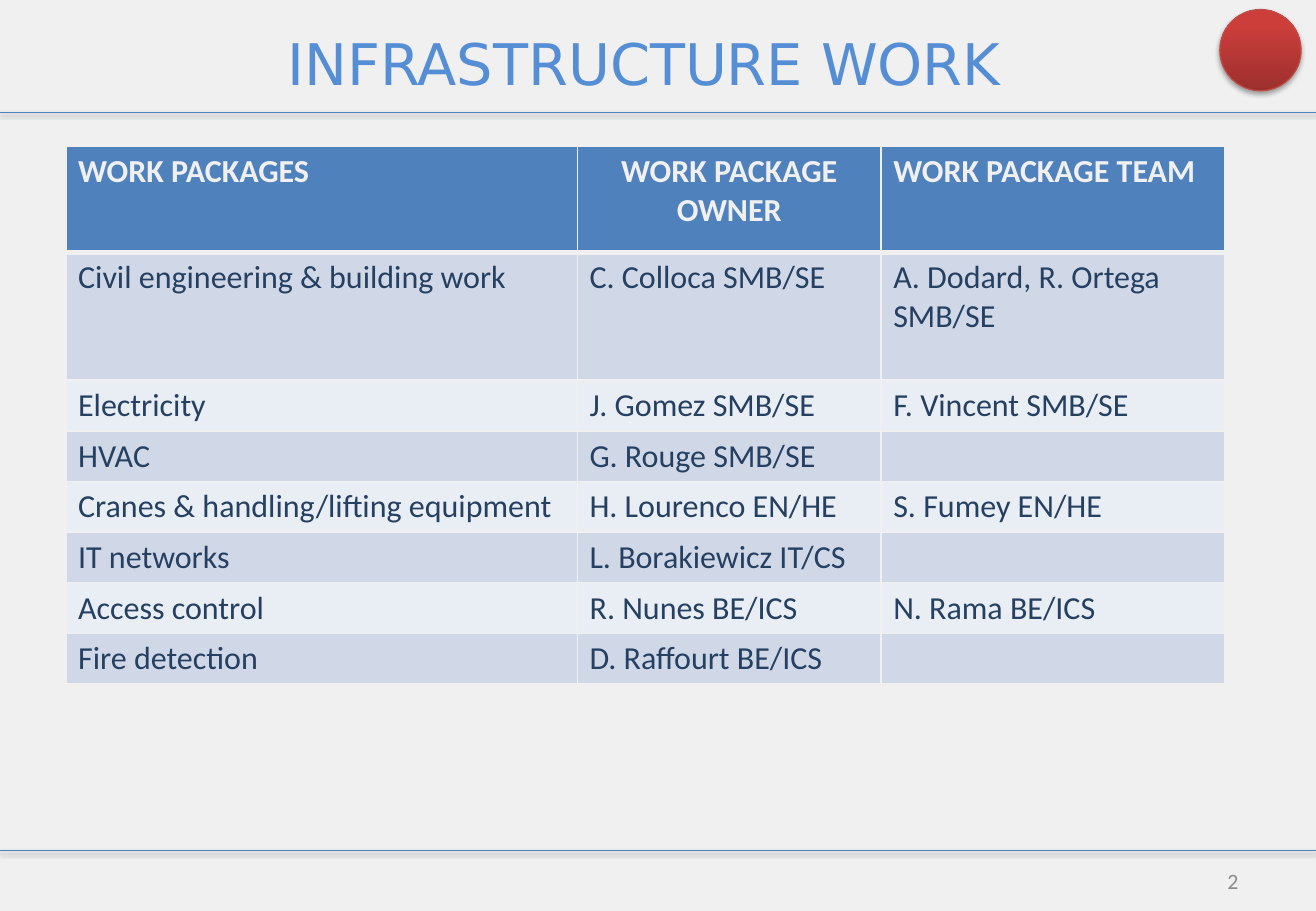
"""Build the infrastructure work slide with its table of work packages."""
from dataclasses import dataclass

from lxml import etree
from pptx import Presentation
from pptx import util as u
from pptx.dml.color import RGBColor
from pptx.enum import shapes, text
from pptx.oxml import ns

PAPER = RGBColor(0xF0, 0xF0, 0xF0)
BLUE = RGBColor(0x4F, 0x81, 0xBD)
TITLE_BLUE = RGBColor(0x55, 0x8E, 0xD5)
NAVY = RGBColor(0x25, 0x40, 0x61)
BAND_DARK = RGBColor(0xD0, 0xD8, 0xE8)
BAND_LIGHT = RGBColor(0xE9, 0xED, 0xF4)
GREY = RGBColor(0x8C, 0x8C, 0x8C)
BADGE_LOW = RGBColor(0x9C, 0x2F, 0x2D)
BADGE_HIGH = RGBColor(0xCB, 0x3E, 0x3A)
BADGE_LINE = RGBColor(0xBF, 0x4C, 0x48)
SHADOW = RGBColor(0, 0, 0)

WIDTH, HEIGHT = u.Cm(27.51), u.Cm(19.05)
RULES = (u.Cm(2.34), u.Cm(17.78))
COLUMNS = (10.69, 6.35, 7.19)
HEADER_HEIGHT, FIRST_HEIGHT, ROW_HEIGHT = 2.23, 2.67, 1.05


@dataclass
class Package:
    name: str
    owner: str
    team: str = ""
    height: float = ROW_HEIGHT


HEADER = Package("WORK PACKAGES", "WORK PACKAGE OWNER", "WORK PACKAGE TEAM", HEADER_HEIGHT)
PACKAGES = [
    Package("Civil engineering & building work", "C. Colloca SMB/SE",
            "A. Dodard, R. Ortega SMB/SE", FIRST_HEIGHT),
    Package("Electricity", "J. Gomez SMB/SE", "F. Vincent SMB/SE"),
    Package("HVAC", "G. Rouge SMB/SE"),
    Package("Cranes & handling/lifting equipment", "H. Lourenco EN/HE", "S. Fumey EN/HE"),
    Package("IT networks", "L. Borakiewicz IT/CS"),
    Package("Access control", "R. Nunes BE/ICS", "N. Rama BE/ICS"),
    Package("Fire detection", "D. Raffourt BE/ICS"),
]


def write(tf, words: str, *, size: float, color: RGBColor, font: str = "Calibri",
          bold: bool = False, align=text.PP_ALIGN.LEFT) -> None:
    p = tf.paragraphs[0]
    p.alignment = align
    for target in (p.font, p.add_run().font if words else p.font):
        target.name, target.size, target.bold = font, u.Pt(size), bold
        target.color.rgb = color
    if words:
        p.runs[0].text = words


def add_shadow(sp, alpha: int, distance: float) -> None:
    sp_pr = sp._element.spPr
    effects = sp_pr.find(ns.qn("a:effectLst"))
    if effects is None:
        effects = etree.SubElement(sp_pr, ns.qn("a:effectLst"))
    outer = etree.SubElement(effects, ns.qn("a:outerShdw"), blurRad=str(u.Pt(3.1)),
                             dist=str(u.Pt(distance)), dir="5400000", rotWithShape="0")
    color = etree.SubElement(outer, ns.qn("a:srgbClr"), val=str(SHADOW))
    etree.SubElement(color, ns.qn("a:alpha"), val=str(alpha * 1000))


def add_rule(s, y: int) -> None:
    line = s.shapes.add_connector(shapes.MSO_CONNECTOR.STRAIGHT, 0, y, WIDTH, y)
    line.line.color.rgb = BLUE
    line.line.width = u.Pt(0.25)
    add_shadow(line, 38, 1.6)


def add_badge(s) -> None:
    sp = s.shapes.add_shape(shapes.MSO_SHAPE.OVAL, u.Cm(25.5), u.Cm(0.2), u.Cm(1.7), u.Cm(1.7))
    sp.shadow.inherit = False
    sp.fill.gradient()
    sp.fill.gradient_angle = 90
    for stop, color, position in zip(sp.fill.gradient_stops, (BADGE_LOW, BADGE_HIGH), (0, 0.8)):
        stop.color.rgb = color
        stop.position = position
    sp.line.color.rgb = BADGE_LINE
    sp.line.width = u.Pt(0.75)
    add_shadow(sp, 35, 1.8)


def set_borders(cell, top: float, bottom: float) -> None:
    tc_pr = cell._tc.get_or_add_tcPr()
    for side, width in (("L", 1), ("R", 1), ("T", top), ("B", bottom)):
        ln = etree.SubElement(tc_pr, ns.qn(f"a:ln{side}"), w=str(u.Pt(width)))
        fill = etree.SubElement(ln, ns.qn("a:solidFill"))
        etree.SubElement(fill, ns.qn("a:srgbClr"), val=str(PAPER))


def add_packages(s) -> None:
    rows = [HEADER, *PACKAGES]
    table = s.shapes.add_table(len(rows), len(COLUMNS), u.Cm(1.38), u.Cm(3.05),
                               u.Cm(sum(COLUMNS)), u.Cm(sum(r.height for r in rows))).table
    for column, width in zip(table.columns, COLUMNS):
        column.width = u.Cm(width)
    for i, package in enumerate(rows):
        table.rows[i].height = u.Cm(package.height)
        header = i == 0
        band = BLUE if header else BAND_DARK if i % 2 else BAND_LIGHT
        for j, words in enumerate((package.name, package.owner, package.team)):
            cell = table.cell(i, j)
            set_borders(cell, 3 if i == 1 else 1, 3 if header else 1)
            cell.fill.solid()
            cell.fill.fore_color.rgb = band
            centred = header and j == 1
            write(cell.text_frame, words, size=19, color=PAPER if header else NAVY, bold=header,
                  align=text.PP_ALIGN.CENTER if centred else text.PP_ALIGN.LEFT)


def add_title(s) -> None:
    sp = s.shapes.title
    sp.left, sp.top, sp.width, sp.height = u.Cm(3.38), u.Cm(0.2), u.Cm(20.17), u.Cm(2.21)
    sp.text_frame.vertical_anchor = text.MSO_ANCHOR.MIDDLE
    sp.text_frame.auto_size = text.MSO_AUTO_SIZE.NONE
    write(sp.text_frame, "INFRASTRUCTURE WORK", size=34, color=TITLE_BLUE,
          font="DejaVu Sans", align=text.PP_ALIGN.CENTER)


def add_page_number(s) -> None:
    tf = s.shapes.add_textbox(u.Cm(19.71), u.Cm(17.91), u.Cm(6.43), u.Cm(1.02)).text_frame
    tf.word_wrap = True
    tf.vertical_anchor = text.MSO_ANCHOR.MIDDLE
    write(tf, "2", size=13, color=GREY, align=text.PP_ALIGN.RIGHT)


def main() -> None:
    prs = Presentation()
    prs.slide_width, prs.slide_height = WIDTH, HEIGHT
    s = prs.slides.add_slide(prs.slide_layouts.get_by_name("Title Only"))
    s.background.fill.solid()
    s.background.fill.fore_color.rgb = PAPER
    for y in RULES:
        add_rule(s, y)
    add_badge(s)
    add_page_number(s)
    add_packages(s)
    add_title(s)
    prs.save("out.pptx")


if __name__ == "__main__":
    main()
